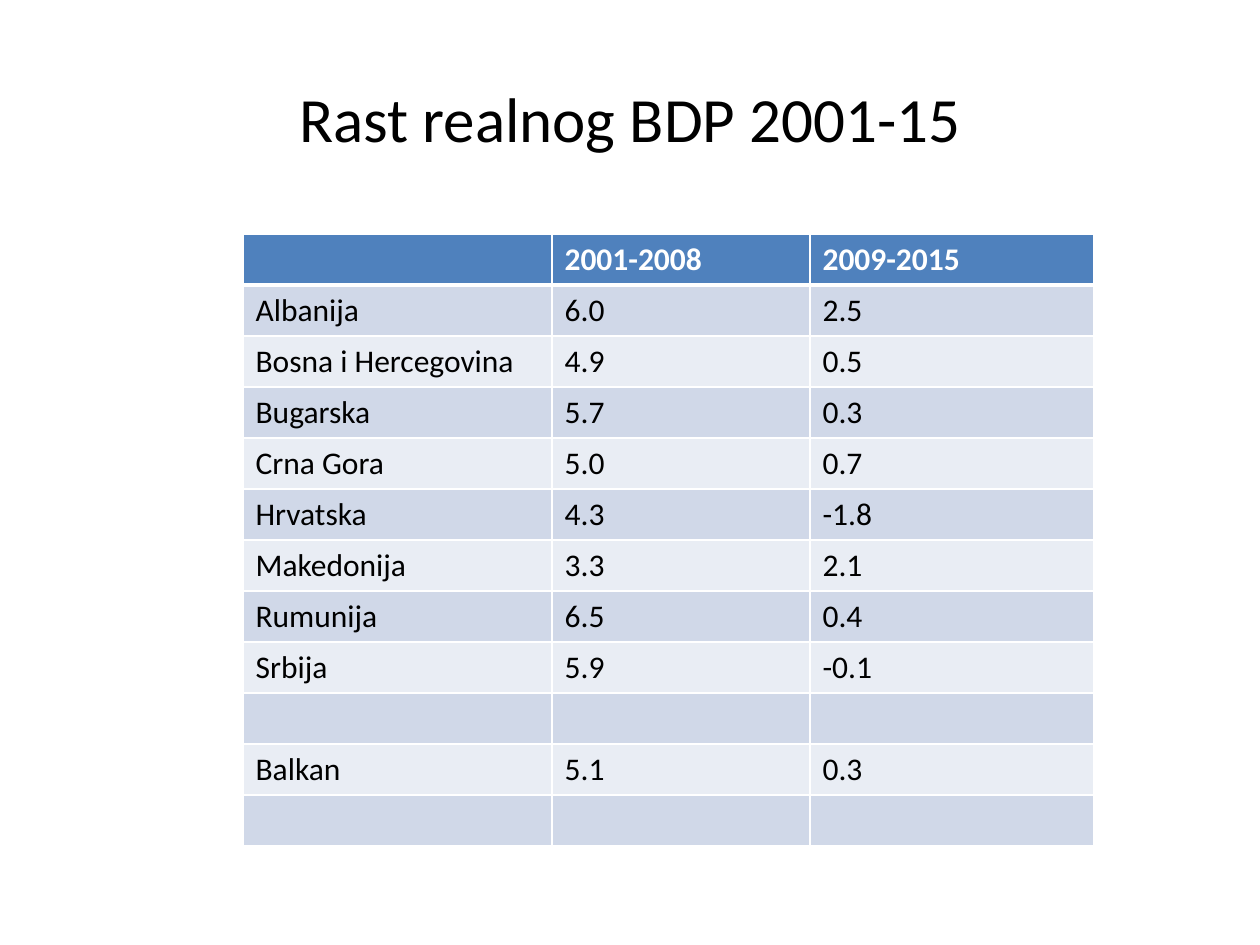
from lxml.etree import SubElement
from pptx import Presentation
from pptx.dml.color import RGBColor
from pptx.enum.text import MSO_ANCHOR, PP_ALIGN
from pptx.oxml.ns import qn
from pptx.util import Pt

PX = 914400 / 126
FONT = "Calibri"
TITLE = "Rast realnog BDP 2001-15"
COLUMNS = [309, 258, 284]
ROW_HEIGHT = 51
ROWS = [
    ("", "2001-2008", "2009-2015"),
    ("Albanija", "6.0", "2.5"),
    ("Bosna i Hercegovina", "4.9", "0.5"),
    ("Bugarska", "5.7", "0.3"),
    ("Crna Gora", "5.0", "0.7"),
    ("Hrvatska", "4.3", "-1.8"),
    ("Makedonija", "3.3", "2.1"),
    ("Rumunija", "6.5", "0.4"),
    ("Srbija", "5.9", "-0.1"),
    ("", "", ""),
    ("Balkan", "5.1", "0.3"),
    ("", "", ""),
]


def px(n):
    """Turn pixels into EMU."""
    return round(n * PX)


def color(value):
    """Turn a hex string into a colour."""
    return RGBColor.from_string(value)


def set_font(p, size, value, bold=False):
    """Set the font of a whole paragraph."""
    p.font.name = FONT
    p.font.size = Pt(size)
    p.font.bold = bold
    p.font.color.rgb = color(value)


def set_borders(cell, widths, value):
    """Draw the left, right, top and bottom borders of a cell."""
    tc_pr = cell._tc.get_or_add_tcPr()
    for side, width in zip("LRTB", widths):
        line = SubElement(tc_pr, qn(f"a:ln{side}"), w=str(Pt(width)))
        fill = SubElement(line, qn("a:solidFill"))
        SubElement(fill, qn("a:srgbClr"), val=value)


def add_title(s, left, top, width, height):
    """Place the centred slide title."""
    tf = s.shapes.add_textbox(px(left), px(top), px(width), px(height)).text_frame
    tf.word_wrap = True
    tf.vertical_anchor = MSO_ANCHOR.MIDDLE
    p = tf.paragraphs[0]
    p.text = TITLE
    p.alignment = PP_ALIGN.CENTER
    set_font(p, 36, "000000")


def add_growth_table(s, left, top):
    """Place the table of growth rates by country."""
    table = s.shapes.add_table(
        len(ROWS), len(COLUMNS), px(left), px(top),
        px(sum(COLUMNS)), px(ROW_HEIGHT * len(ROWS)),
    ).table
    for column, width in zip(table.columns, COLUMNS):
        column.width = px(width)
    for i, values in enumerate(ROWS):
        table.rows[i].height = px(ROW_HEIGHT)
        header = i == 0
        band = "4F81BD" if header else ("E9EDF4", "D0D8E8")[i % 2]
        for j, value in enumerate(values):
            cell = table.cell(i, j)
            set_borders(cell, (1, 1, 3 if i == 1 else 1, 3 if header else 1), "FFFFFF")
            cell.fill.solid()
            cell.fill.fore_color.rgb = color(band)
            p = cell.text_frame.paragraphs[0]
            if value:
                p.text = value
            set_font(p, 18, "FFFFFF" if header else "000000", header)


def main():
    """Build and save the slide."""
    prs = Presentation()
    prs.slide_width, prs.slide_height = px(1260), px(945)
    s = prs.slides.add_slide(prs.slide_layouts[6])
    add_title(s, 63, 38, 1134, 158)
    add_growth_table(s, 243, 234)
    prs.save("out.pptx")


if __name__ == "__main__":
    main()
